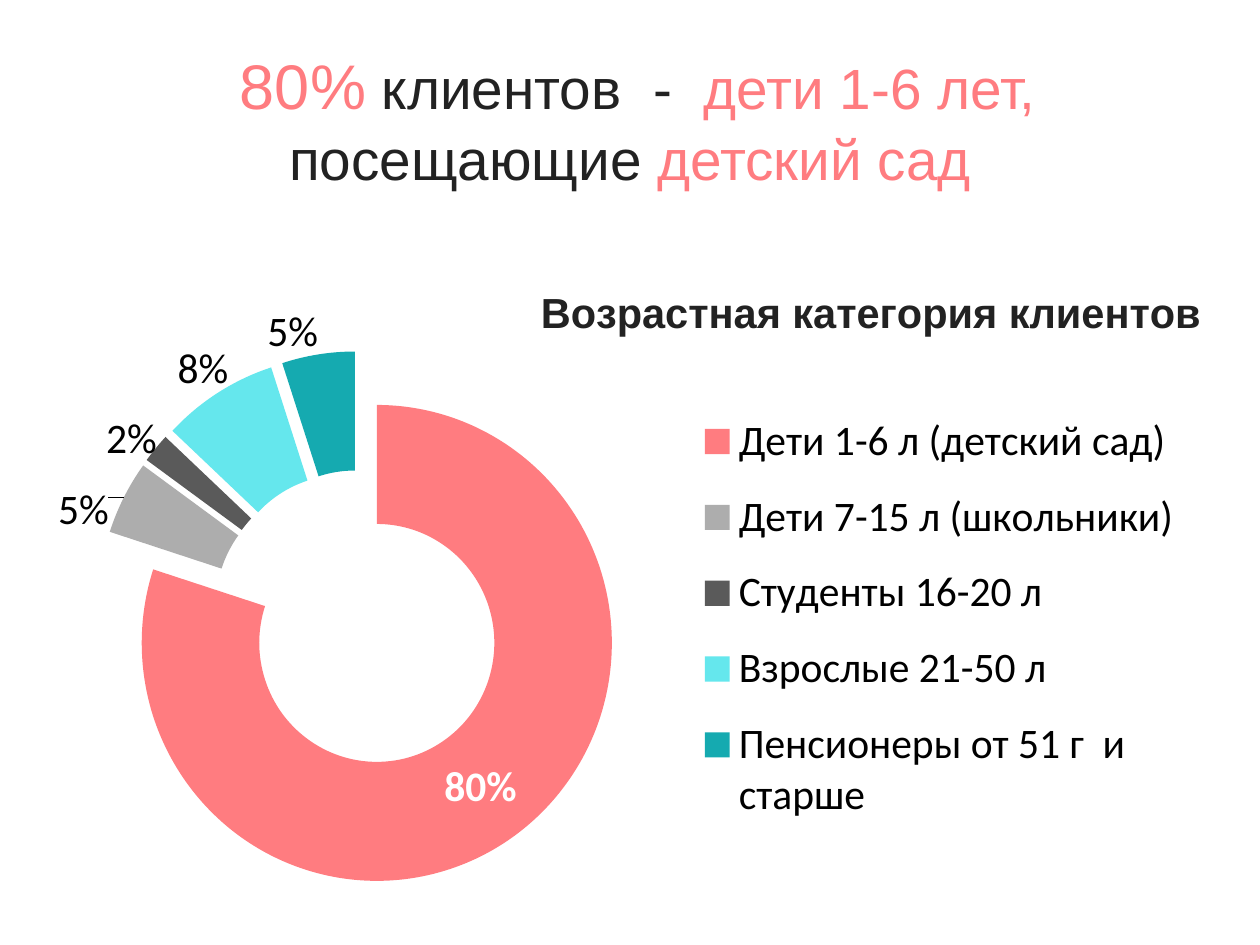
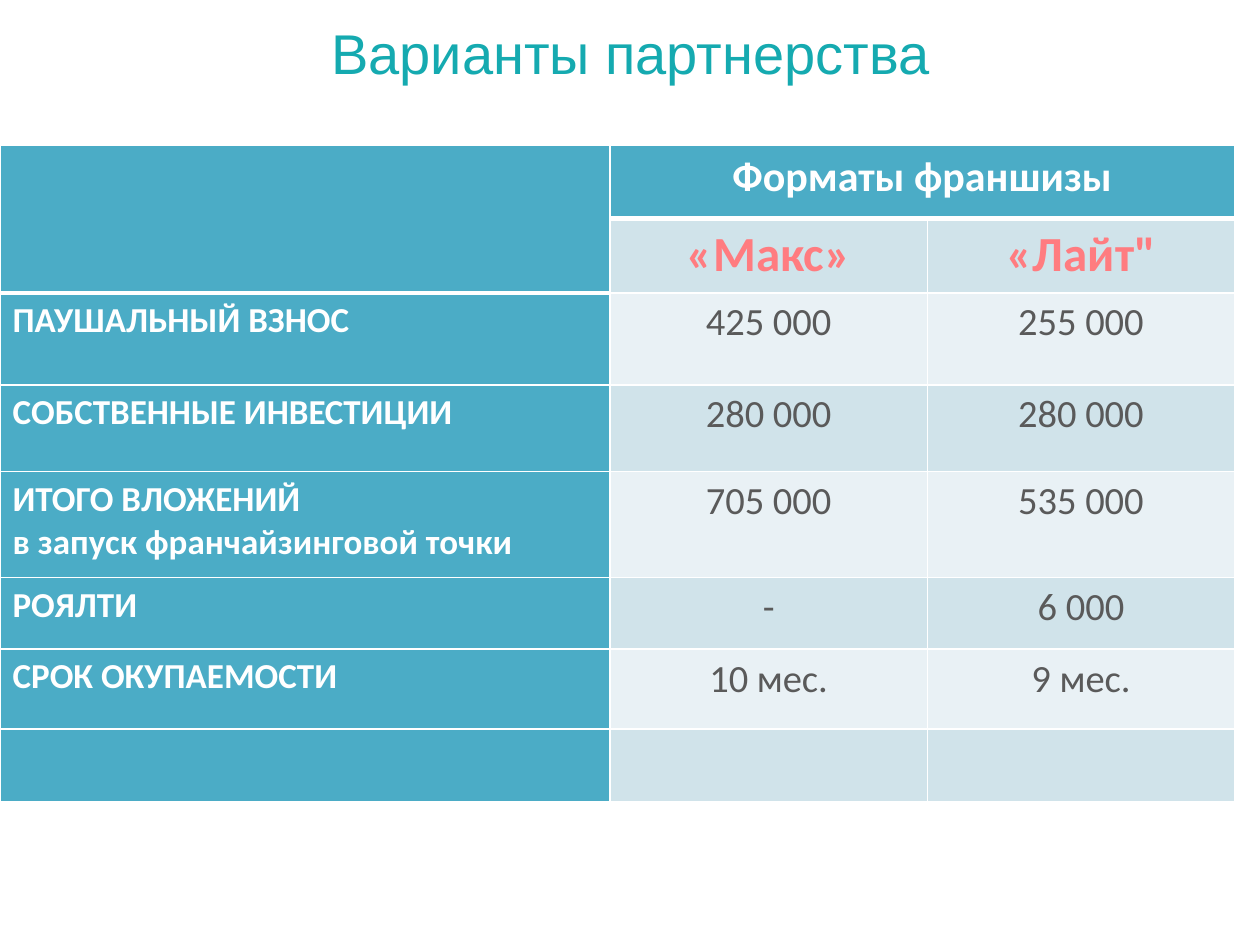
from dataclasses import dataclass

from lxml import etree
from pptx import Presentation
from pptx.chart.data import CategoryChartData
from pptx.dml.color import RGBColor
from pptx.enum.chart import XL_CHART_TYPE, XL_LEGEND_POSITION
from pptx.enum.text import MSO_ANCHOR, MSO_AUTO_SIZE, PP_ALIGN
from pptx.oxml.ns import qn
from pptx.util import Pt

DOUGHNUT = XL_CHART_TYPE.DOUGHNUT
RIGHT = XL_LEGEND_POSITION.RIGHT
MIDDLE = MSO_ANCHOR.MIDDLE
NO_AUTOFIT = MSO_AUTO_SIZE.NONE
CENTER = PP_ALIGN.CENTER
LEFT = PP_ALIGN.LEFT


@dataclass(frozen=True)
class Theme:
    heading_font: str = "Arial"
    body_font: str = "Calibri"
    coral: str = "FF7C80"
    teal: str = "15AAB0"
    aqua: str = "65E7ED"
    silver: str = "ADADAD"
    gray: str = "5A5A5A"
    ink: str = "222222"
    black: str = "000000"
    white: str = "FFFFFF"
    header_blue: str = "4BACC6"
    band_dark: str = "D0E3EA"
    band_light: str = "E9F1F5"
    title: float = 32
    title_mixed: float = 32.4
    title_number: float = 36
    title_lead: float = 39.6
    chart: float = 24
    format_name: float = 28
    amount: float = 22
    row_label: float = 20


THEME = Theme()


def style(font, size, color, name=THEME.body_font, bold=False):
    values = {"size": Pt(size), "name": name, "bold": bold}
    for attribute, value in values.items():
        setattr(font, attribute, value)
    font.color.rgb = RGBColor.from_string(color)


def place(part, index, **fractions):
    """Give a chart part a manual layout in fractions of the chart."""
    for old in part.findall(qn("c:layout")):
        part.remove(old)
    layout = etree.Element(qn("c:layout"))
    manual = etree.SubElement(layout, qn("c:manualLayout"))
    for tag, value in fractions.items():
        etree.SubElement(manual, qn(f"c:{tag}")).set("val", str(value))
    part.insert(index, layout)


prs = Presentation()
prs.slide_width, prs.slide_height = Pt(720), Pt(540)

# Titles of both slides: box, then runs of text, size, colour and font
lead, head = THEME.body_font, THEME.heading_font
titles = [
    ((36, 21.5, 648, 89.5), [
        (" ", THEME.title_lead, THEME.coral, lead),
        ("80%", THEME.title_number, THEME.coral, head),
        (" ", THEME.title_mixed, THEME.coral, head),
        ("клиентов  -  ", THEME.title_mixed, THEME.ink, head),
        ("дети 1-6 лет, ", THEME.title_mixed, THEME.coral, head),
        ("посещающие ", THEME.title_mixed, THEME.ink, head),
        ("детский сад", THEME.title_mixed, THEME.coral, head),
    ]),
    ((36.5, 2, 648, 55.5), [("Варианты партнерства", THEME.title, THEME.teal, head)]),
]
slides = []
for box, runs in titles:
    slide = prs.slides.add_slide(prs.slide_layouts[5])
    title = slide.shapes.title
    for side, length in zip(("left", "top", "width", "height"), box):
        setattr(title, side, Pt(length))
    frame = title.text_frame
    for attribute, value in {"word_wrap": True, "vertical_anchor": MIDDLE,
                             "auto_size": NO_AUTOFIT}.items():
        setattr(frame, attribute, value)
    paragraph = frame.paragraphs[0]
    paragraph.alignment = CENTER
    for text, size, color, name in runs:
        run = paragraph.add_run()
        run.text = text
        style(run.font, size, color, name)
    slides.append(slide)
clients_slide, partnership_slide = slides

# Clients by age: category, share, colour, label shift from the ring
ages = [
    ("Дети 1-6 л (детский сад)", 80, THEME.coral, None),
    ("Дети 7-15 л (школьники)", 5, THEME.silver, (-0.08, -0.02)),
    ("Студенты 16-20 л", 2, THEME.gray, (-0.06, -0.07)),
    ("Взрослые 21-50 л", 8, THEME.aqua, (-0.04, -0.11)),
    ("Пенсионеры от 51 г  и старше", 5, THEME.teal, (-0.03, -0.12)),
]
heading = "Возрастная категория клиентов"
age_data = CategoryChartData()
age_data.categories = [age[0] for age in ages]
age_data.add_series(heading, [age[1] for age in ages])
chart = clients_slide.shapes.add_chart(
    DOUGHNUT, Pt(20), Pt(139.5), Pt(670.5), Pt(382.5), age_data).chart
style(chart.font, 18, THEME.black)

chart.has_title = True
chart.chart_title.include_in_layout = False
chart.chart_title.text_frame.text = heading
style(chart.chart_title.text_frame.paragraphs[0].runs[0].font,
      THEME.chart, THEME.ink, THEME.heading_font, True)
chart.has_legend = True
chart.legend.position = RIGHT
chart.legend.include_in_layout = False
style(chart.legend.font, THEME.chart, THEME.black)

plot = chart.plots[0]
plot.vary_by_categories = True
shares = plot.series[0]
labels = shares.data_labels
for attribute, value in {"show_percentage": True, "show_value": False,
                         "number_format": "0%",
                         "number_format_is_linked": False}.items():
    setattr(labels, attribute, value)
style(labels.font, THEME.chart, THEME.black)
for index, (_, _, color, shift) in enumerate(ages):
    point = shares.points[index]
    point.format.fill.solid()
    point.format.fill.fore_color.rgb = RGBColor.from_string(color)
    inside = shift is None
    style(point.data_label.font, THEME.chart,
          THEME.white if inside else THEME.black, bold=inside)

root = chart.element
for slice_xml in root.iter(qn("c:dPt")):
    explosion = etree.Element(qn("c:explosion"))
    explosion.set("val", "25")
    slice_xml.find(qn("c:spPr")).addprevious(explosion)
explosion = etree.Element(qn("c:explosion"))
explosion.set("val", "25")
next(root.iter(qn("c:dPt"))).addprevious(explosion)
for label, (_, _, _, shift) in zip(list(root.iter(qn("c:dLbl"))), ages):
    label.find(qn("c:showVal")).set("val", "0")
    label.find(qn("c:showPercent")).set("val", "1")
    if shift:
        place(label, 1, x=shift[0], y=shift[1])
edges = {"xMode": "edge", "yMode": "edge"}
place(next(root.iter(qn("c:title"))), 1, **edges, x=0.43, y=0.05)
place(next(root.iter(qn("c:legend"))), 1, **edges, x=0.56, y=0.22, w=0.44, h=0.68)
place(next(root.iter(qn("c:plotArea"))), 0, layoutTarget="inner", **edges,
      x=0.05, y=0.16, w=0.46, h=0.8)

# Partnership formats
offers = [
    ("", "Форматы франшизы", ""),
    ("", "«Макс»", "«Лайт\""),
    ("ПАУШАЛЬНЫЙ ВЗНОС", "425 000", "255 000"),
    ("СОБСТВЕННЫЕ ИНВЕСТИЦИИ", "280 000", "280 000"),
    ("ИТОГО ВЛОЖЕНИЙ\nв запуск франчайзинговой точки", "705 000", "535 000"),
    ("РОЯЛТИ", "-", "6 000"),
    ("СРОК ОКУПАЕМОСТИ", "10 мес.", "9 мес."),
    ("", "", ""),
]
column_widths = [348.5, 181.5, 175.5]
row_heights = [42, 42.5, 52.5, 49.5, 60.5, 41, 45.5, 42]
table = partnership_slide.shapes.add_table(
    len(offers), len(column_widths), Pt(0), Pt(83),
    Pt(sum(column_widths)), Pt(sum(row_heights))).table
table.first_row = table.horz_banding = False
for column, width in zip(table.columns, column_widths):
    column.width = Pt(width)
for row, height in zip(table.rows, row_heights):
    row.height = Pt(height)
table.cell(0, 0).merge(table.cell(1, 0))
table.cell(0, 1).merge(table.cell(0, 2))

for r, offer in enumerate(offers):
    for c, text in enumerate(offer):
        cell = table.cell(r, c)
        under_header = r == 0 or (r == 1 and c == 0)
        below_header = (r == 1 and c > 0) or (r == 2 and c == 0)
        properties = cell._tc.get_or_add_tcPr()
        for side in "LRTB":
            thick = (side == "B" and under_header) or (side == "T" and below_header)
            line = etree.SubElement(properties, qn(f"a:ln{side}"))
            line.set("w", str(Pt(3 if thick else 1)))
            fill = etree.SubElement(line, qn("a:solidFill"))
            etree.SubElement(fill, qn("a:srgbClr")).set("val", THEME.white)
        if r == 0 or c == 0:
            background = THEME.header_blue
        else:
            background = THEME.band_dark if r % 2 else THEME.band_light
        cell.fill.solid()
        cell.fill.fore_color.rgb = RGBColor.from_string(background)
        if not text:
            continue
        if c == 0:
            size, color = THEME.row_label, THEME.white
        elif r == 0:
            size, color = THEME.chart, THEME.white
        elif r == 1:
            size, color = THEME.format_name, THEME.coral
        else:
            size, color = THEME.amount, THEME.gray
        cell.text_frame.text = text
        for paragraph in cell.text_frame.paragraphs:
            paragraph.alignment = CENTER if c else LEFT
            style(paragraph.runs[0].font, size, color, bold=c == 0 or r < 2)

prs.save("out.pptx")
